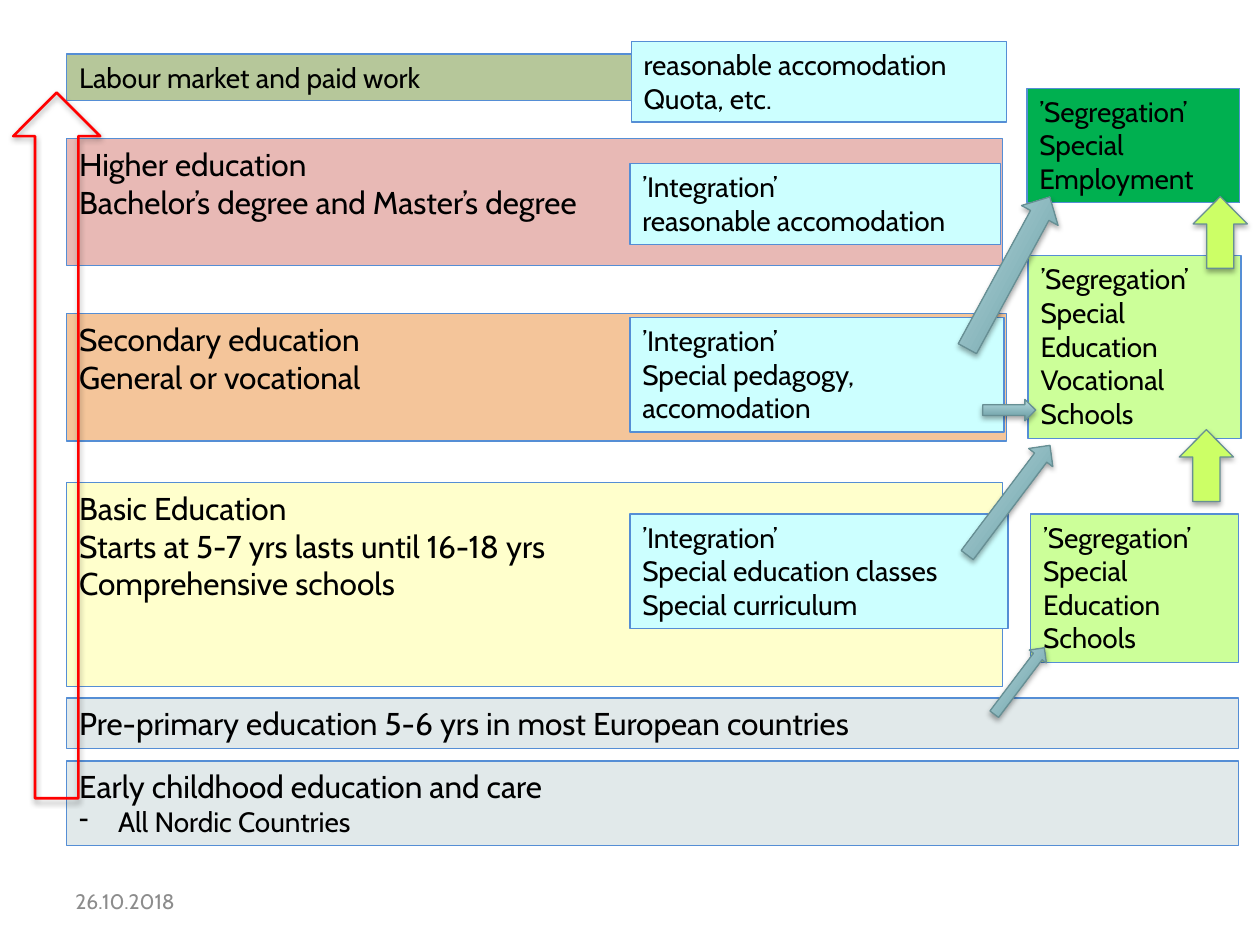
from dataclasses import dataclass
from typing import Optional

from lxml.etree import SubElement
from pptx import Presentation
from pptx.dml.color import RGBColor
from pptx.enum.shapes import MSO_SHAPE
from pptx.enum.text import MSO_ANCHOR, PP_ALIGN
from pptx.oxml.ns import qn
from pptx.util import Inches, Pt

FONT = "Cabin"
BLACK = RGBColor(0x00, 0x00, 0x00)
DATE_GREY = RGBColor(0x8C, 0x8C, 0x8C)
BORDER_BLUE = RGBColor(0x55, 0x8E, 0xD5)
PALE_GREY = RGBColor(0xE1, 0xE9, 0xEA)
YELLOW = RGBColor(0xFF, 0xFF, 0xCC)
ORANGE = RGBColor(0xF4, 0xC5, 0x9A)
PINK = RGBColor(0xE8, 0xB9, 0xB5)
OLIVE = RGBColor(0xB6, 0xC7, 0x9A)
CYAN = RGBColor(0xCC, 0xFF, 0xFF)
LIGHT_GREEN = RGBColor(0xCC, 0xFF, 0x99)
GREEN = RGBColor(0x00, 0xB0, 0x50)
LIME = RGBColor(0xCC, 0xFF, 0x66)
TEAL_DARK = RGBColor(0x63, 0x96, 0x9D)
TEAL_LIGHT = RGBColor(0xB8, 0xDD, 0xE2)
ARROW_BORDER = RGBColor(0x67, 0x8F, 0x94)
RED = RGBColor(0xFF, 0x00, 0x00)

LEVEL_LEFT = 0.53
SUPPORT_LEFT = 5


@dataclass
class Box:
    left: float
    top: float
    width: float
    height: float
    fill: RGBColor
    lines: list[str]
    size: int = 16
    bullet: str = ""


@dataclass
class Arrow:
    left: float
    top: float
    width: float
    height: float
    rotation: float
    fill: Optional[tuple[RGBColor, ...]]
    line: RGBColor = ARROW_BORDER
    line_width: float = 0.75
    head: float = 0.505


BOXES = [
    Box(LEVEL_LEFT, 6.04, 9.3, 0.67, PALE_GREY, ["Early childhood education and care"], 18,
        "All Nordic Countries"),
    Box(LEVEL_LEFT, 5.54, 9.3, 0.4, PALE_GREY,
        ["Pre-primary education 5-6 yrs in most European countries"], 18),
    Box(LEVEL_LEFT, 3.83, 7.43, 1.62, YELLOW,
        ["Basic Education", "Starts at 5-7 yrs lasts until 16-18 yrs", "Comprehensive schools"], 18),
    Box(LEVEL_LEFT, 2.49, 7.46, 1.01, ORANGE, ["Secondary education", "General or vocational"], 18),
    Box(LEVEL_LEFT, 1.1, 7.43, 1.01, PINK,
        ["Higher education", "Bachelor’s degree and Master’s degree"], 18),
    Box(SUPPORT_LEFT, 4.08, 3, 0.91, CYAN,
        ["’Integration’", "Special education classes", "Special curriculum"]),
    Box(8.16, 2.03, 1.69, 1.45, LIGHT_GREEN,
        ["’Segregation’", "Special Education", "Vocational Schools"]),
    Box(8.18, 4.08, 1.65, 1.18, LIGHT_GREEN, ["’Segregation’", "Special", "Education", "Schools"]),
    Box(SUPPORT_LEFT, 2.52, 2.97, 0.91, CYAN, ["’Integration’", "Special pedagogy, accomodation"]),
    Box(8.15, 0.7, 1.69, 0.91, GREEN, ["’Segregation’", "Special Employment"]),
    Box(SUPPORT_LEFT, 1.3, 2.94, 0.64, CYAN, ["’Integration’", "reasonable accomodation"]),
]
TEAL = (TEAL_DARK, TEAL_LIGHT)
TRANSFER_ARROWS = [
    Arrow(7.32, 2, 1.37, 0.33, 298.5, TEAL),
    Arrow(7.8, 3.17, 0.42, 0.17, 0, TEAL),
    Arrow(7.46, 3.85, 1.09, 0.24, 307, TEAL),
    Arrow(9.29, 3.48, 0.57, 0.43, 270, (LIME,)),
    Arrow(9.4, 1.63, 0.57, 0.43, 270, (LIME,)),
    Arrow(7.76, 5.32, 0.66, 0.17, 307, TEAL),
]
LABOUR_MARKET = Box(LEVEL_LEFT, 0.43, 7.43, 0.37, OLIVE, ["Labour market and paid work"])
MAIN_PATH = Arrow(-2.35, 3.19, 5.6, 0.69, 270, None, RED, 1.5, 0.5)
WORK_SUPPORT = Box(SUPPORT_LEFT + 0.01, 0.33, 2.98, 0.64, CYAN,
                   ["reasonable accomodation", "Quota, etc."])


def style_paragraph(paragraph, size: int, color: RGBColor = BLACK) -> None:
    paragraph.alignment = PP_ALIGN.LEFT
    paragraph.font.name = FONT
    paragraph.font.size = Pt(size)
    paragraph.font.color.rgb = color


def add_dash(paragraph) -> None:
    """Give the paragraph a dash bullet with a hanging indent."""
    properties = paragraph._p.get_or_add_pPr()
    properties.set("marL", str(Inches(0.31)))
    properties.set("indent", str(Inches(-0.31)))
    SubElement(properties, qn("a:buChar"), char="-")


def add_shape(slide, kind: MSO_SHAPE, item):
    shape = slide.shapes.add_shape(kind, Inches(item.left), Inches(item.top),
                                   Inches(item.width), Inches(item.height))
    shape.shadow.inherit = False
    return shape


def draw_box(slide, box: Box) -> None:
    shape = add_shape(slide, MSO_SHAPE.RECTANGLE, box)
    shape.fill.solid()
    shape.fill.fore_color.rgb = box.fill
    shape.line.color.rgb = BORDER_BLUE
    shape.line.width = Pt(0.75)
    frame = shape.text_frame
    frame.word_wrap = True
    frame.vertical_anchor = MSO_ANCHOR.TOP
    frame.text = "\n".join(box.lines)
    for paragraph in frame.paragraphs:
        style_paragraph(paragraph, box.size)
    if box.bullet:
        paragraph = frame.add_paragraph()
        paragraph.text = box.bullet
        add_dash(paragraph)
        style_paragraph(paragraph, 16)


def add_shadow(shape) -> None:
    """Drop a soft black shadow straight down."""
    effects = shape._element.spPr.find(qn("a:effectLst"))
    shadow = SubElement(effects, qn("a:outerShdw"), blurRad=str(Pt(3.1)), dist=str(Pt(1.8)),
                        dir="5400000", rotWithShape="0")
    color = SubElement(shadow, qn("a:srgbClr"), val="000000")
    SubElement(color, qn("a:alpha"), val="35000")


def draw_arrow(slide, arrow: Arrow) -> None:
    shape = add_shape(slide, MSO_SHAPE.RIGHT_ARROW, arrow)
    shape.rotation = arrow.rotation
    shape.adjustments[0] = 0.5
    shape.adjustments[1] = arrow.head
    if arrow.fill is None:
        shape.fill.background()
    elif len(arrow.fill) == 1:
        shape.fill.solid()
        shape.fill.fore_color.rgb = arrow.fill[0]
    else:
        shape.fill.gradient()
        shape.fill.gradient_angle = 90
        for position, (stop, color) in enumerate(zip(shape.fill.gradient_stops, arrow.fill)):
            stop.position = position
            stop.color.rgb = color
    shape.line.color.rgb = arrow.line
    shape.line.width = Pt(arrow.line_width)
    add_shadow(shape)


def draw_date(slide) -> None:
    box = slide.shapes.add_textbox(Inches(0.5), Inches(6.95), Inches(1.18), Inches(0.4))
    frame = box.text_frame
    frame.word_wrap = True
    frame.vertical_anchor = MSO_ANCHOR.MIDDLE
    frame.text = "26.10.2018"
    style_paragraph(frame.paragraphs[0], 12, DATE_GREY)


def main() -> None:
    presentation = Presentation()
    presentation.slide_width = Inches(10)
    presentation.slide_height = Inches(7.5)
    slide = presentation.slides.add_slide(presentation.slide_layouts[6])
    draw_date(slide)
    for box in BOXES:
        draw_box(slide, box)
    for arrow in TRANSFER_ARROWS:
        draw_arrow(slide, arrow)
    draw_box(slide, LABOUR_MARKET)
    draw_arrow(slide, MAIN_PATH)
    draw_box(slide, WORK_SUPPORT)
    presentation.save("out.pptx")


if __name__ == "__main__":
    main()
